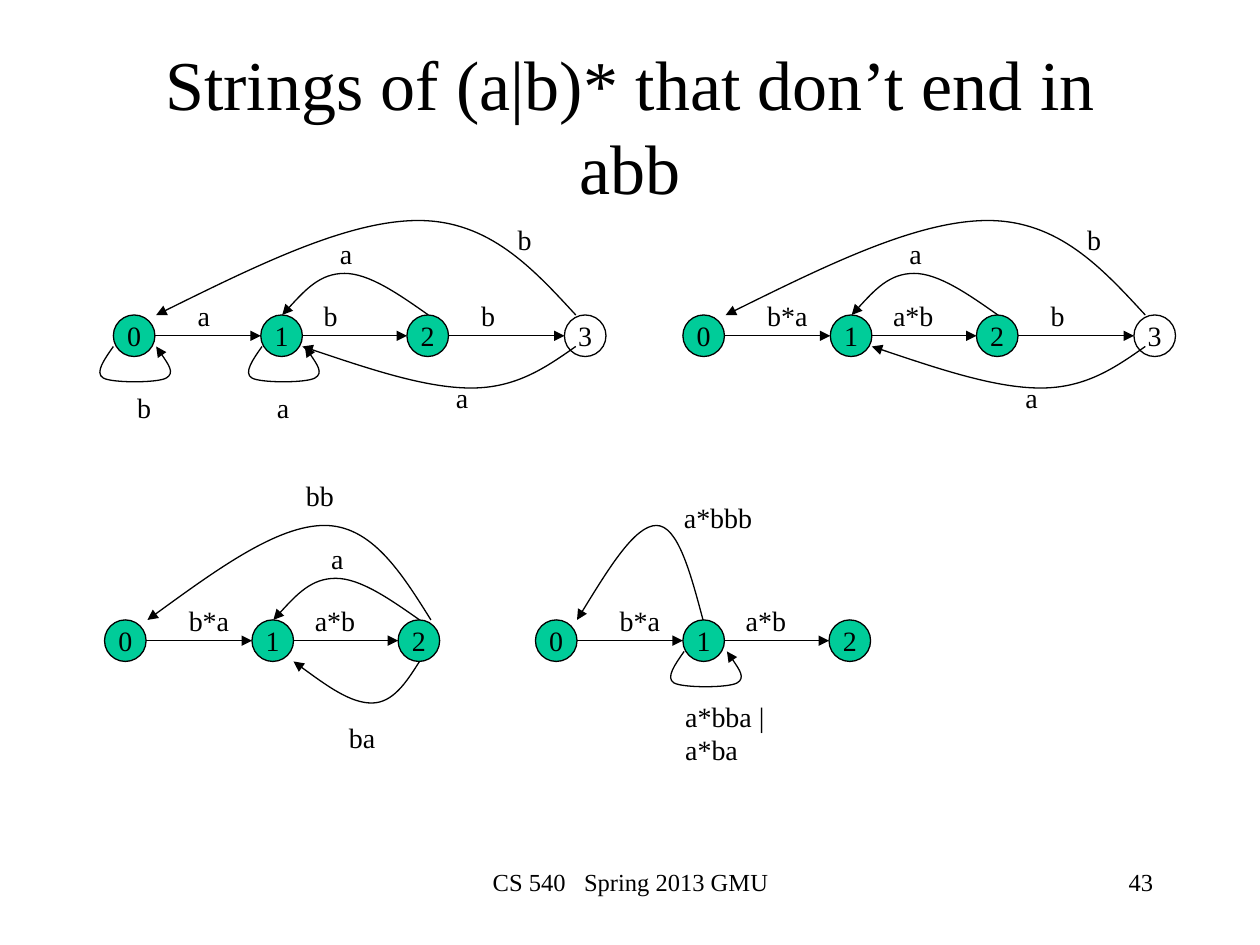
"""Build a slide of four automata for strings of (a|b)* that do not end in abb."""
from lxml import etree
from pptx import Presentation
from pptx.dml.color import RGBColor
from pptx.enum import shapes as kinds, text as t
from pptx.oxml.ns import qn
from pptx.util import Inches, Pt

BLACK = RGBColor(0x00, 0x00, 0x00)
GREEN = RGBColor(0x00, 0xCC, 0x99)
DIAMETER = 0.33
STATE_OFFSETS = [0, 1.17, 2.33, 3.58]
LETTER_WIDTHS = {"a": 0.1, " ": 0.06, "|": 0.04}
LOOP = [(0, 0.25), (-0.07, 0.35), (-0.15, 0.46), (-0.08, 0.5), (-0.01, 0.54),
        (0.35, 0.54), (0.42, 0.5), (0.49, 0.46), (0.41, 0.35), (0.34, 0.25)]


def write(frame, lines, size, align):
    for index, line in enumerate(lines):
        paragraph = frame.add_paragraph() if index else frame.paragraphs[0]
        paragraph.alignment = align
        run = paragraph.add_run()
        run.text = line
        run.font.name = "Times New Roman"
        run.font.size = Pt(size)
        run.font.color.rgb = BLACK


def finish_arrow(arrow):
    arrow.line.color.rgb = BLACK
    arrow.line.width = Pt(0.75)
    properties = arrow._element.spPr
    outline = properties.find(qn("a:ln"))
    etree.SubElement(outline, qn("a:tailEnd"), type="triangle")
    if properties.find(qn("a:effectLst")) is None:
        outline.addnext(etree.Element(qn("a:effectLst")))


prs = Presentation()
prs.slide_width, prs.slide_height = Inches(10), Inches(7.5)
slide = prs.slides.add_slide(prs.slide_layouts[5])

title = slide.shapes.title
title.left, title.top = Inches(0.75), Inches(0.67)
title.width, title.height = Inches(8.5), Inches(1.25)
title.text_frame.auto_size = t.MSO_AUTO_SIZE.NONE
title.text_frame.vertical_anchor = t.MSO_ANCHOR.MIDDLE
title.text_frame.margin_bottom = Inches(0.66)
write(title.text_frame, ["Strings of (a|b)* that don’t end in abb"], 40, t.PP_ALIGN.CENTER)

for left, width, words, align in [
    (3.42, 3.17, "CS 540   Spring 2013 GMU", t.PP_ALIGN.CENTER),
    (7.17, 2.08, "43", t.PP_ALIGN.RIGHT),
]:
    footer = slide.shapes.add_textbox(Inches(left), Inches(6.83), Inches(width), Inches(0.5))
    footer.text_frame.word_wrap = True
    write(footer.text_frame, [words], 14, align)

# Arcs: start x, two shoulder xs, end x, start y, peak y, end y.
inner_arc = (2.5, 2.03, 1.64, 1.34, 0, -0.33, 0)
four_state_arcs = [
    inner_arc,
    (3.67, 2.98, 1.86, 0.34, 0, -0.75, 0),
    (3.67, 3.2, 2.48, 1.5, 0.25, 0.58, 0.25),
]
four_state_labels = [("b", 2.82, -0.18), ("a", 1.7, -0.67), ("b", 3.11, -0.78), ("a", 2.62, 0.47)]
merged_labels = [("b*a", 0.57, -0.18), ("a*b", 1.57, -0.18)]
automata = [
    (0.9, 2.5, 4, four_state_arcs, [0, 1.18],
     four_state_labels + [("a", 0.57, -0.18), ("b", 1.57, -0.18), ("b", 0.09, 0.55), ("a", 1.2, 0.55)]),
    (5.42, 2.5, 4, four_state_arcs, [], four_state_labels + merged_labels),
    (0.83, 4.92, 3,
     [inner_arc, (2.59, 2.12, 1.37, 0.34, 0, -0.75, 0), (2.5, 2.29, 1.95, 1.5, 0.33, 0.66, 0.33)],
     [], merged_labels + [("a", 1.7, -0.67), ("bb", 1.5, -1.17), ("ba", 1.84, 0.75)]),
    (4.25, 4.92, 3, [(1.33, 1.13, 0.79, 0.33, 0, -0.75, 0)], [1.18],
     merged_labels + [("a*bba |\na*ba", 1.09, 0.58), ("a*bbb", 1.08, -1)]),
]

for left, top, state_count, arcs, loops, labels in automata:
    offsets = STATE_OFFSETS[:state_count]
    for number, offset in enumerate(offsets):
        state = slide.shapes.add_shape(
            kinds.MSO_SHAPE.OVAL, Inches(left + offset), Inches(top), Inches(DIAMETER), Inches(DIAMETER))
        state.shadow.inherit = False
        state.line.color.rgb = BLACK
        state.line.width = Pt(0.75)
        if number < 3:
            state.fill.solid()
            state.fill.fore_color.rgb = GREEN
        else:
            state.fill.background()
        state.text_frame.word_wrap = False
        state.text_frame.vertical_anchor = t.MSO_ANCHOR.MIDDLE
        write(state.text_frame, [str(number)], 16, t.PP_ALIGN.CENTER)

    middle = Inches(top + DIAMETER / 2)
    for source, target in zip(offsets, offsets[1:]):
        step = slide.shapes.add_connector(
            kinds.MSO_CONNECTOR.STRAIGHT, Inches(left + source + DIAMETER), middle,
            Inches(left + target), middle)
        finish_arrow(step)

    curves = [[(x + offset, y) for x, y in LOOP] for offset in loops]
    for start, near, far, end, start_y, peak, end_y in arcs:
        curves.append([
            (start, start_y), ((start + near) / 2, (start_y + peak) / 2), (near, peak),
            ((near + far) / 2, peak), (far, peak), ((far + end) / 2, (peak + end_y) / 2), (end, end_y)])
    for curve in curves:
        points = [(Inches(left + x), Inches(top + y)) for x, y in curve]
        builder = slide.shapes.build_freeform(*points[0])
        builder.add_line_segments(points[1:], close=False)
        transition = builder.convert_to_shape()
        transition.fill.background()
        route = transition._element.xpath(".//a:path")[0]
        segments = route.findall(qn("a:lnTo"))
        for index in range(0, len(segments), 3):
            bend = etree.SubElement(route, qn("a:cubicBezTo"))
            for segment in segments[index:index + 3]:
                bend.append(segment[0])
                route.remove(segment)
        finish_arrow(transition)

    for words, x, y in labels:
        lines = words.split("\n")
        width = 0.2 + max(sum(LETTER_WIDTHS.get(c, 0.11) for c in line) for line in lines)
        label = slide.shapes.add_textbox(
            Inches(left + x), Inches(top + y), Inches(width), Inches(0.1 + 0.27 * len(lines)))
        label.text_frame.word_wrap = False
        label.text_frame.auto_size = t.MSO_AUTO_SIZE.SHAPE_TO_FIT_TEXT
        write(label.text_frame, lines, 16, t.PP_ALIGN.LEFT)

prs.save("out.pptx")
